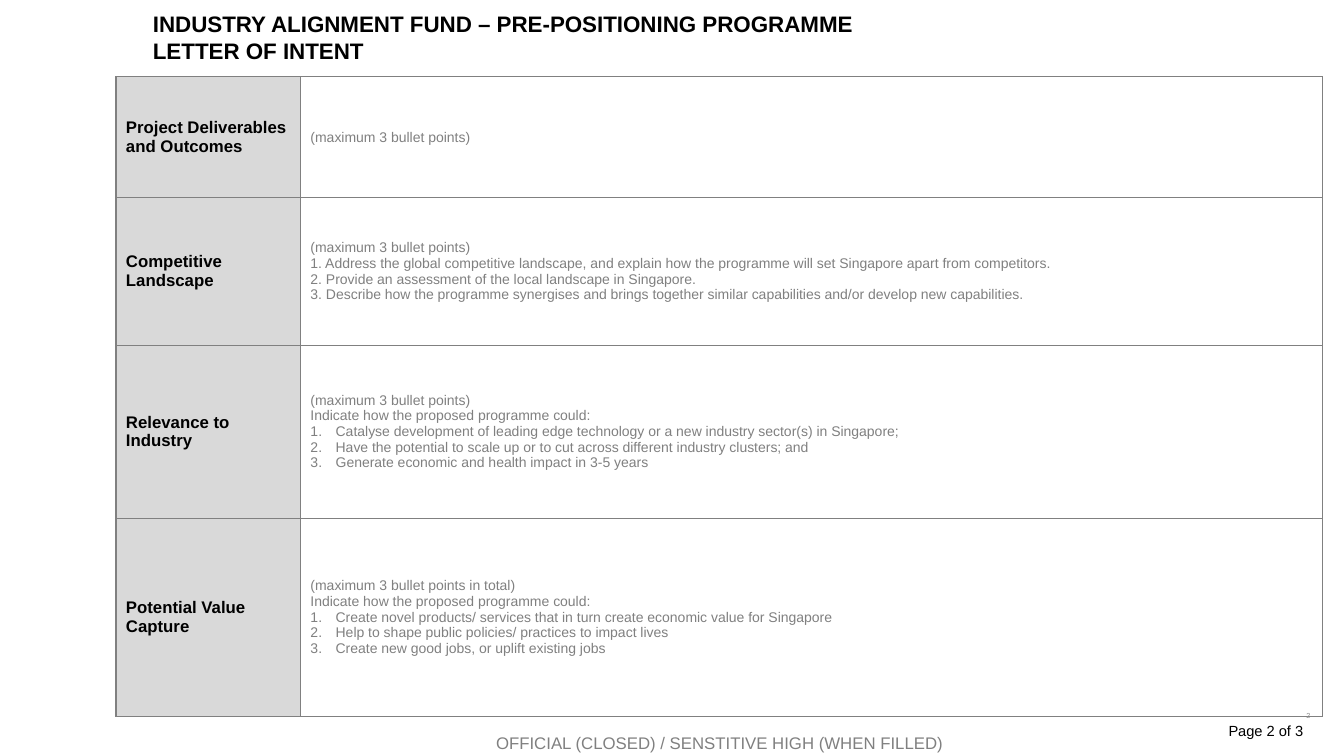
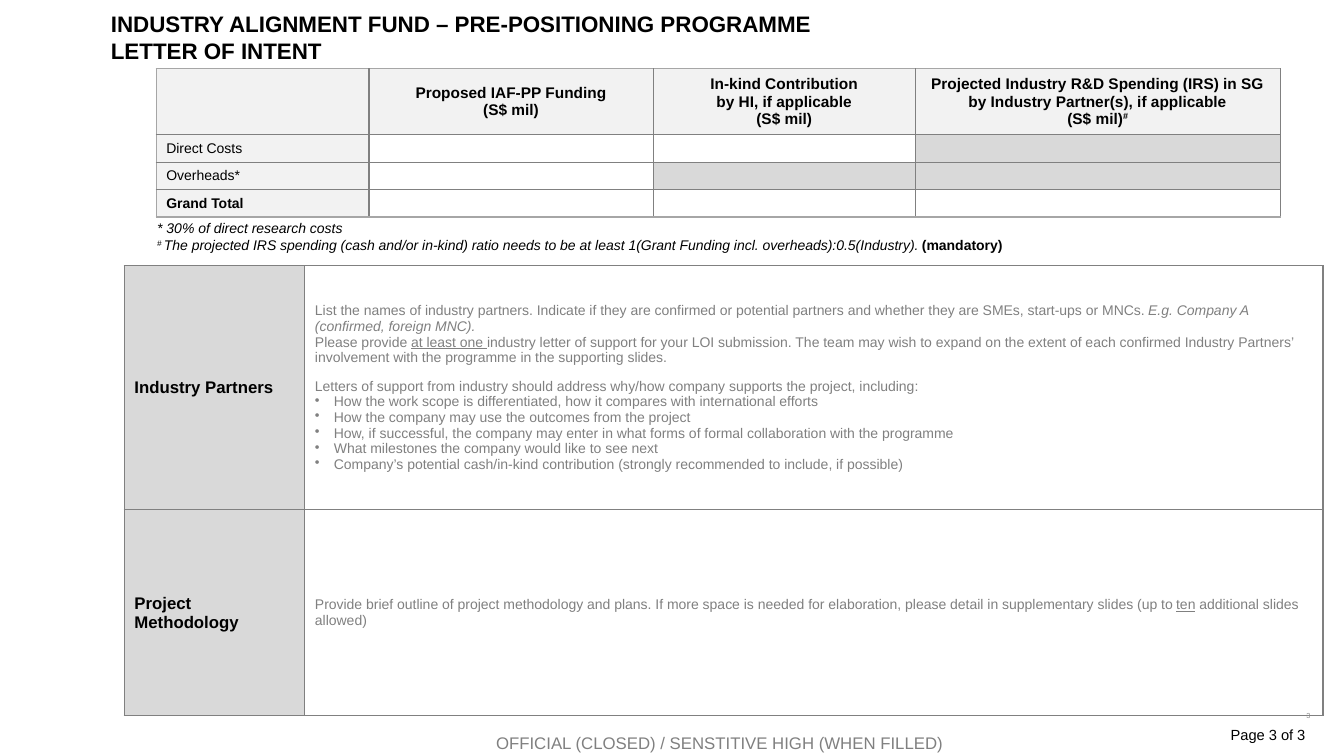
"""Build the two letter-of-intent form slides."""
import pptx
import pptx.dml.color
import pptx.enum.text
import pptx.oxml.ns
import pptx.util
from dataclasses import dataclass
from lxml import etree

Pt = pptx.util.Pt
RGB = pptx.dml.color.RGBColor.from_string
ALIGN = pptx.enum.text.PP_ALIGN
ANCHOR = pptx.enum.text.MSO_ANCHOR
qn = pptx.oxml.ns.qn


@dataclass(frozen=True)
class Theme:
    font: str = "Arial"
    ink: str = "000000"
    grey: str = "808080"
    faint: str = "8C8C8C"
    rim: str = "A6A6A6"
    label: str = "D9D9D9"
    head: str = "F2F2F2"
    title: float = 16
    large: float = 12
    mid: float = 11
    page: float = 10.5
    body: float = 10
    tiny: float = 5.2


look = Theme()
BULLETS = {
    "1.": ("buAutoNum", {"type": "arabicPeriod"}, 18),
    "•": ("buChar", {"char": "•"}, 13.5),
}


def write(frame, paras, size, color=look.ink, style="", align=ALIGN.LEFT):
    """Fill a frame; a paragraph is a string, a (bullet, text) pair or a list of (text, style) runs."""
    frame.word_wrap = True
    for i, para in enumerate(paras):
        line = frame.paragraphs[0] if i == 0 else frame.add_paragraph()
        line.alignment = align
        if isinstance(para, tuple):
            mark, para = para
            tag, attrs, step = BULLETS[mark]
            props = line._p.get_or_add_pPr()
            props.set("marL", str(Pt(step)))
            props.set("indent", str(-Pt(step)))
            etree.SubElement(props, qn("a:" + tag), attrs)
        if not para:
            etree.SubElement(line._p, qn("a:endParaRPr"), sz=str(int(size * 100)))
            continue
        parts = [(para, style)] if isinstance(para, str) else para
        for text, flags in parts:
            if len(parts) == 1:
                line.text = text
                runs = line.runs
            else:
                runs = [line.add_run()]
                runs[0].text = text
            for run in runs:
                font = run.font
                font.name, font.size = look.font, Pt(size)
                font.color.rgb = RGB(color)
                font.bold = "b" in flags
                font.italic = "i" in flags
                font.underline = "u" in flags
                if "^" in flags:
                    run._r.get_or_add_rPr().set("baseline", "30000")


def grid(slide, left, top, cols, rows, rim=look.grey):
    """Add a plain bordered table; rim colours its left, top and bottom edges."""
    frame = slide.shapes.add_table(len(rows), len(cols), Pt(left), Pt(top), Pt(sum(cols)), Pt(sum(rows)))
    table = frame.table
    table.first_row = table.horz_banding = False
    for col, width in zip(table.columns, cols):
        col.width = Pt(width)
    for row, height in zip(table.rows, rows):
        row.height = Pt(height)
    for r in range(len(rows)):
        for c in range(len(cols)):
            cell = table.cell(r, c)
            cell.vertical_anchor = ANCHOR.MIDDLE
            outer = {"L": c == 0, "R": False, "T": r == 0, "B": r == len(rows) - 1}
            for side, edge in outer.items():
                line = etree.SubElement(cell._tc.get_or_add_tcPr(), qn("a:ln" + side), w=str(Pt(1)))
                paint = etree.SubElement(line, qn("a:solidFill"))
                etree.SubElement(paint, qn("a:srgbClr"), val=rim if edge else look.grey)
            cell.fill.background()
    return table


HEADING = "INDUSTRY ALIGNMENT FUND – PRE-POSITIONING PROGRAMME\vLETTER OF INTENT"
NOTICE = "OFFICIAL (CLOSED) / SENSTITIVE HIGH (WHEN FILLED)"
LIMIT = "(maximum 3 bullet points)"
PROMPT = "Indicate how the proposed programme could:"

AIMS = [
    ("Project Deliverables and Outcomes", [LIMIT]),
    ("Competitive Landscape", [
        LIMIT,
        "1. Address the global competitive landscape, and explain how the programme will set "
        "Singapore apart from competitors.",
        "2. Provide an assessment of the local landscape in Singapore.",
        "3. Describe how the programme synergises and brings together similar capabilities "
        "and/or develop new capabilities.",
    ]),
    ("Relevance to Industry", [
        LIMIT,
        PROMPT,
        ("1.", "Catalyse development of leading edge technology or a new industry sector(s) in Singapore;"),
        ("1.", "Have the potential to scale up or to cut across different industry clusters; and"),
        ("1.", "Generate economic and health impact in 3-5 years"),
    ]),
    ("Potential Value Capture", [
        "(maximum 3 bullet points in total)",
        PROMPT,
        ("1.", "Create novel products/ services that in turn create economic value for Singapore"),
        ("1.", "Help to shape public policies/ practices to impact lives"),
        ("1.", "Create new good jobs, or uplift existing jobs"),
    ]),
]
PLANS = [
    ("Industry Partners", [
        [("List the names of industry partners. Indicate if they are confirmed or potential partners "
          "and whether they are SMEs, start-ups or MNCs. ", ""),
         ("E.g. Company A (confirmed, foreign MNC).", "i")],
        [("Please provide ", ""), ("at least one ", "u"),
         ("industry letter of support for your LOI submission. The team may wish to expand on the extent "
          "of each confirmed Industry Partners’ involvement with the programme in the supporting slides.", "")],
        "Letters of support from industry should address why/how company supports the project, including:",
        ("•", "How the work scope is differentiated, how it compares with international efforts"),
        ("•", "How the company may use the outcomes from the project"),
        ("•", "How, if successful, the company may enter in what forms of formal collaboration with the programme"),
        ("•", "What milestones the company would like to see next"),
        ("•", "Company’s potential cash/in-kind contribution (strongly recommended to include, if possible)"),
    ]),
    ("Project Methodology", [
        [("Provide brief outline of project methodology and plans. If more space is needed for elaboration, "
          "please detail in supplementary slides (up to ", ""),
         ("ten", "u"), (" additional slides allowed)", "")],
    ]),
]
COSTS = [
    [[""],
     ["Proposed IAF-PP Funding", "(S$ mil)"],
     ["In-kind Contribution", "by HI, if applicable", "(S$ mil)"],
     ["Projected Industry R&D Spending (IRS) in SG by Industry Partner(s), if applicable",
      [("(S$ mil)", "b"), ("#", "b^")]]],
    [["Direct Costs"], [""], [""], [""]],
    [["Overheads*"], [""], [""], [""]],
    [["Grand Total"], [""], [""], [""]],
]
CLOSED = {(1, 3), (2, 2), (2, 3)}
NOTES = [
    "* 30% of direct research costs",
    [("# ", "i^"),
     ("The projected IRS spending (cash and/or in-kind) ratio needs to be at least "
      "1(Grant Funding incl. overheads):0.5(Industry). ", "i"),
     ("(mandatory)", "b")],
]
PAGES = [
    (2, 102, (830, 512), AIMS, (82.8, 54.9), (131.8, 730), (86.4, 105.2, 123.6, 141.8)),
    (3, 72, (831.6, 515), PLANS, (88.8, 189.8), (129, 727.2), (174.4, 147)),
]

deck = pptx.Presentation()
deck.slide_width, deck.slide_height = Pt(960), Pt(540)

for number, left, corner, topics, spot, cols, rows in PAGES:
    slide = deck.slides.add_slide(deck.slide_layouts[5])
    title = slide.shapes.title
    title.left, title.top, title.width, title.height = Pt(left), Pt(3.6), Pt(692), Pt(43.2)
    title.text_frame.auto_size = pptx.enum.text.MSO_AUTO_SIZE.NONE
    title.text_frame.vertical_anchor = ANCHOR.TOP
    write(title.text_frame, [HEADING], look.title, style="b")

    form = grid(slide, *spot, cols, rows)
    for r, (name, hints) in enumerate(topics):
        label, entry = form.cell(r, 0), form.cell(r, 1)
        label.fill.solid()
        label.fill.fore_color.rgb = RGB(look.label)
        write(label.text_frame, [name], look.large, style="b")
        write(entry.text_frame, hints, look.body, look.grey)

    if topics is PLANS:
        form.cell(0, 1).text_frame.paragraphs[2].space_before = Pt(9)
        costs = grid(slide, 111.6, 49, (152, 203, 187.2, 260.6), (47.2, 19.6, 19.6, 19.6), look.rim)
        for r, row in enumerate(COSTS):
            for c, paras in enumerate(row):
                cell = costs.cell(r, c)
                if r == 0 or c == 0 or (r, c) in CLOSED:
                    cell.fill.solid()
                    cell.fill.fore_color.rgb = RGB(look.label if (r, c) in CLOSED else look.head)
                write(cell.text_frame, paras, look.body if r else look.mid,
                      style="b" if r in (0, 3) else "", align=ALIGN.LEFT if r else ALIGN.CENTER)
        notes = slide.shapes.add_textbox(Pt(105.2), Pt(153.4), Pt(732), Pt(31.6))
        write(notes.text_frame, NOTES, look.body, style="i")

    for text, box, size, color, align in [
        (str(number), (717, 497, 224, 28.8), look.tiny, look.faint, ALIGN.RIGHT),
        (f"Page {number} of 3", (*corner, 108, 21), look.page, look.ink, ALIGN.RIGHT),
        (NOTICE, (190.8, 520, 646.6, 21.6), look.large, look.grey, ALIGN.CENTER),
    ]:
        frame = slide.shapes.add_textbox(*map(Pt, box)).text_frame
        write(frame, [text], size, color, align=align)
        if size == look.tiny:
            frame.vertical_anchor = ANCHOR.MIDDLE
            frame.margin_left = frame.margin_right = Pt(5)
            frame.margin_top = frame.margin_bottom = Pt(2.9)

deck.save("out.pptx")
